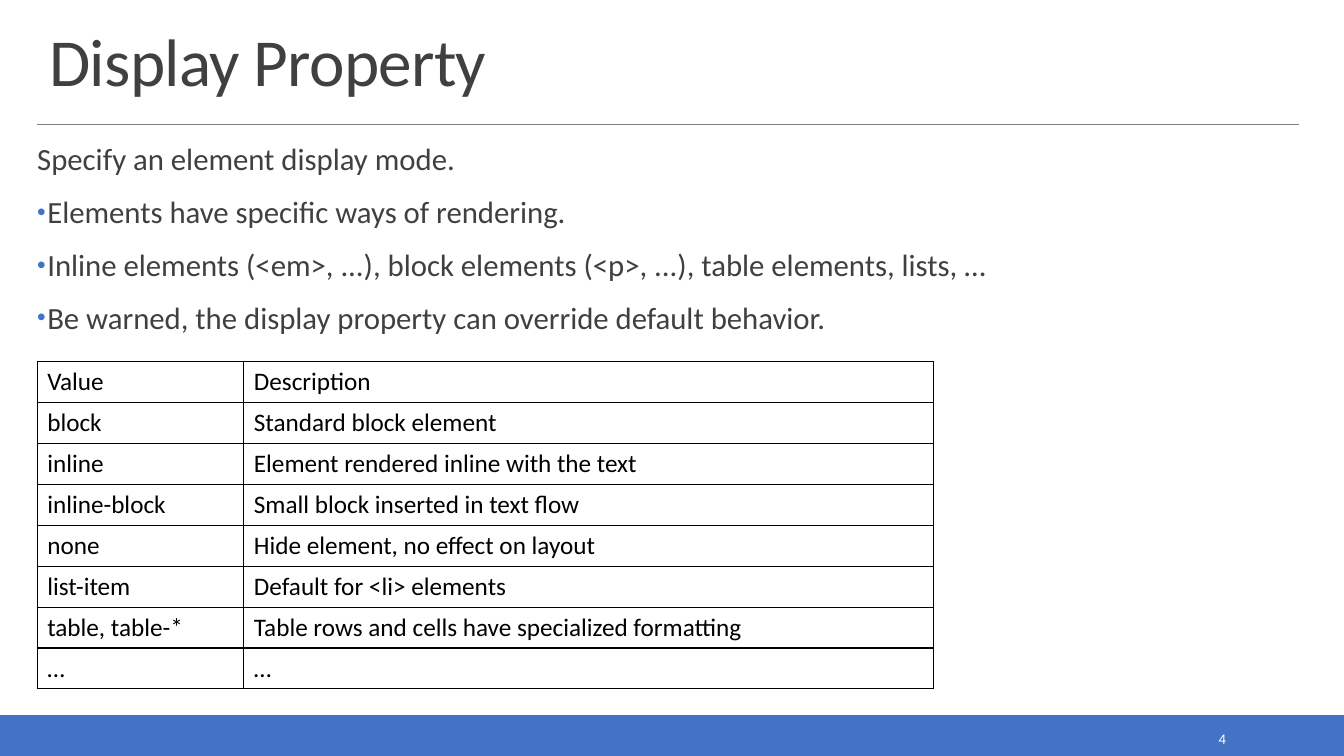
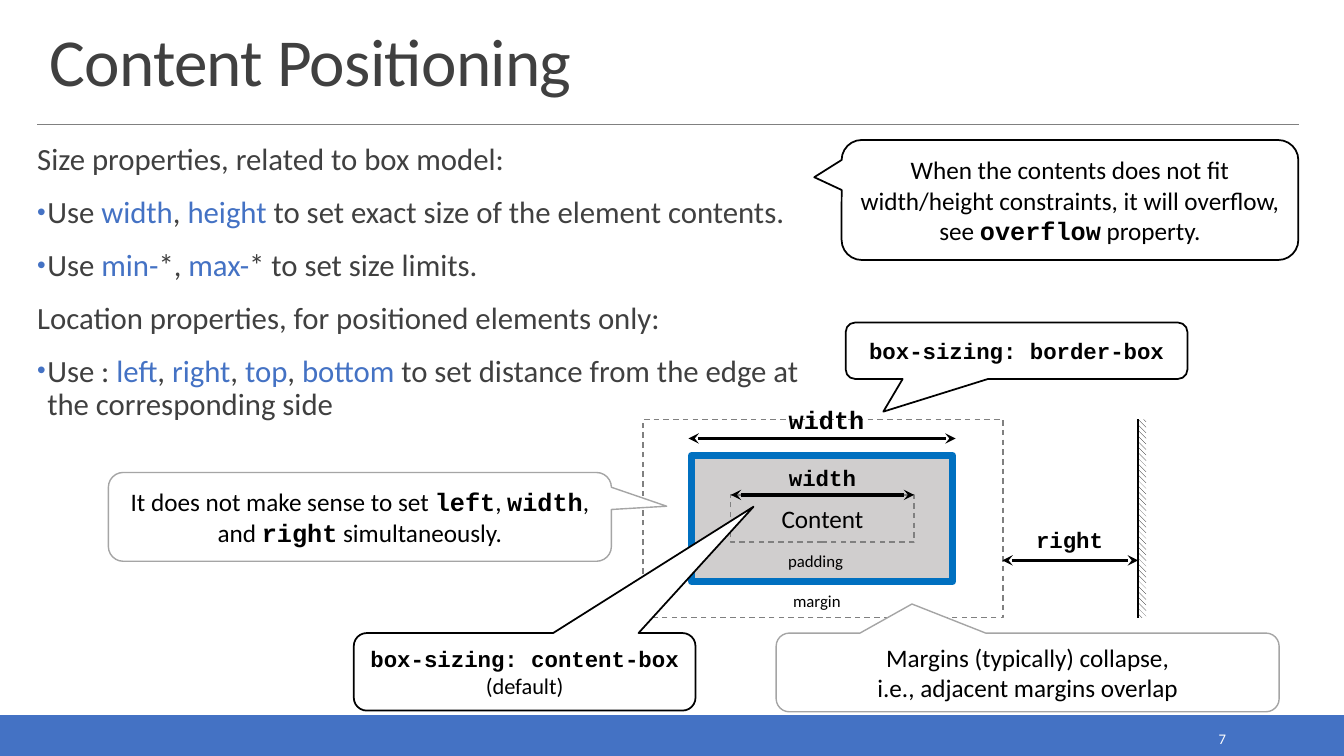
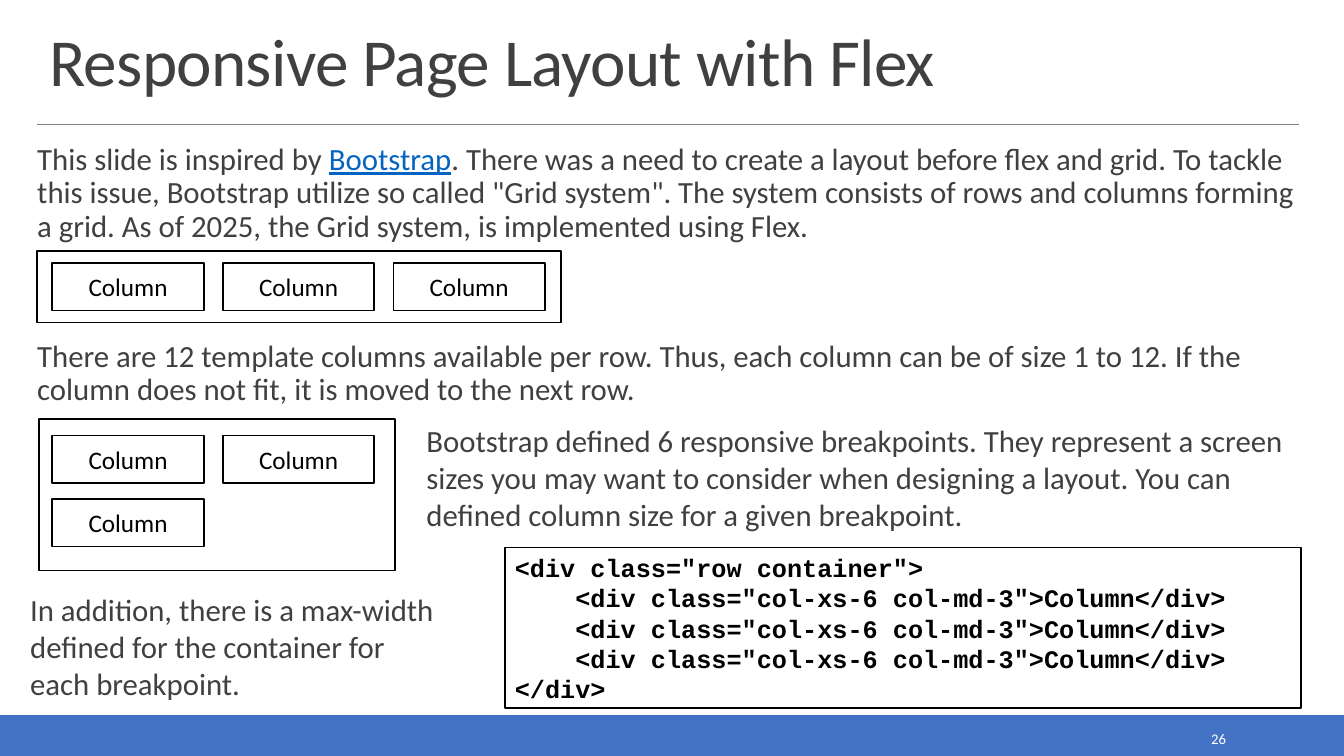
from pptx import Presentation
from pptx.dml.color import RGBColor
from pptx.enum.dml import MSO_LINE, MSO_PATTERN
from pptx.enum.shapes import MSO_CONNECTOR, MSO_SHAPE
from pptx.enum.text import MSO_ANCHOR, MSO_AUTO_SIZE, PP_ALIGN
from pptx.oxml.ns import qn
from pptx.util import Pt
from lxml.etree import SubElement

COLORS = {
    "accent": "4472C4",
    "text": "404040",
    "black": "000000",
    "white": "FFFFFF",
    "rule": "808080",
    "muted": "A5A5A5",
    "padding": "D0CECE",
    "border": "0070C0",
    "link": "0563C1",
}
SANS, MONO = "Calibri", "Courier New"
LEFT, CONTENT_WIDTH, BODY_TOP = 26.6, 901.4, 100
INDENTS = {"•": (7.2, -7.2), "\t": (43.2, 0)}
CODE = {"font": MONO, "bold": True}
PROSE = {"size": 22, "color": "text", "insets": (0, 2.9)}
BODY = {**PROSE, "spacing": 0.9, "before": 12, "after": 2}
COLUMN_SIZE, COLUMN_PITCH = (108.2, 34), 121.8


def rgb(name):
    return RGBColor.from_string(COLORS[name])


def points(*lengths):
    return [Pt(length) for length in lengths]


def mark_paragraph(paragraph, marker):
    margin, first = INDENTS.get(marker, (0, 0))
    properties = paragraph._p.get_or_add_pPr()
    properties.set("marL", str(Pt(margin)))
    properties.set("indent", str(Pt(first)))
    if marker == "•":
        color = SubElement(properties, qn("a:buClr"))
        SubElement(color, qn("a:srgbClr"), val=COLORS["accent"])
        SubElement(properties, qn("a:buSzPct"), val="80000")
        SubElement(properties, qn("a:buChar"), char=marker)
    else:
        SubElement(properties, qn("a:buNone"))


def format_run(run, size, color, font=SANS, bold=False, underline=False, tracking=0):
    run.font.size = Pt(size)
    run.font.name = font
    run.font.bold = bold
    run.font.underline = underline
    run.font.color.rgb = rgb(color)
    if tracking:
        run._r.get_or_add_rPr().set("spc", str(int(tracking * 100)))


def write(frame, text, size=18, color="black", emphasis=None, align=PP_ALIGN.LEFT,
          anchor=MSO_ANCHOR.TOP, insets=(7.2, 3.6), spacing=None, before=None,
          after=None, **run_format):
    frame.word_wrap = True
    frame.auto_size = MSO_AUTO_SIZE.NONE
    frame.vertical_anchor = anchor
    frame.margin_left = frame.margin_right = Pt(insets[0])
    frame.margin_top = frame.margin_bottom = Pt(insets[1])
    plain = {"size": size, "color": color, **run_format}
    for index, line in enumerate(text.split("\n")):
        paragraph = frame.add_paragraph() if index else frame.paragraphs[0]
        paragraph.alignment = align
        paragraph.line_spacing = spacing
        paragraph.space_before = None if before is None else Pt(before)
        paragraph.space_after = None if after is None else Pt(after)
        marker = line[:1] if line[:1] in INDENTS else ""
        mark_paragraph(paragraph, marker)
        for part, words in enumerate(line[len(marker):].split("|")):
            if words:
                run = paragraph.add_run()
                run.text = words
                format_run(run, **{**plain, **(emphasis or {} if part % 2 else {})})


def add_label(slide, box, text, **text_format):
    label = slide.shapes.add_textbox(*points(*box))
    write(label.text_frame, text, **text_format)


def add_box(slide, box, text="", fill=None, line="black", weight=1.25, dash=None,
            kind=MSO_SHAPE.RECTANGLE, align=PP_ALIGN.CENTER,
            anchor=MSO_ANCHOR.MIDDLE, **text_format):
    shape = slide.shapes.add_shape(kind, *points(*box))
    shape.shadow.inherit = False
    if fill:
        shape.fill.solid()
        shape.fill.fore_color.rgb = rgb(fill)
    else:
        shape.fill.background()
    if line:
        shape.line.color.rgb = rgb(line)
        shape.line.width = Pt(weight)
        shape.line.dash_style = dash
    else:
        shape.line.fill.background()
    if text:
        write(shape.text_frame, text, align=align, anchor=anchor, **text_format)
    return shape


def add_callout(slide, box, tip, text, **box_format):
    callout = add_box(slide, box, text, fill="white", emphasis=CODE,
                      kind=MSO_SHAPE.ROUNDED_RECTANGULAR_CALLOUT, **box_format)
    for index, value in enumerate((*tip, 0.167)):
        callout.adjustments[index] = value


def add_line(slide, ends, color="black", weight=1.0, arrows=False):
    line = slide.shapes.add_connector(MSO_CONNECTOR.STRAIGHT, *points(*ends))
    line.line.color.rgb = rgb(color)
    line.line.width = Pt(weight)
    if arrows:
        outline = line.line._get_or_add_ln()
        for end in ("a:headEnd", "a:tailEnd"):
            SubElement(outline, qn(end), type="stealth")
    SubElement(line._element.spPr, qn("a:effectLst"))
    return line


def add_dimension(slide, start, end, y):
    add_line(slide, (start, y, end, y), weight=2.5, arrows=True)


def border_cell(cell):
    properties = cell._tc.get_or_add_tcPr()
    for index, side in enumerate(("a:lnL", "a:lnR", "a:lnT", "a:lnB")):
        edge = SubElement(properties, qn(side), w=str(Pt(1)))
        fill = SubElement(edge, qn("a:solidFill"))
        SubElement(fill, qn("a:srgbClr"), val=COLORS["black"])
        properties.insert(index, edge)


def add_grid(slide, left, top, widths, row_height, rows):
    frame = slide.shapes.add_table(len(rows), len(widths), *points(
        left, top, sum(widths), row_height * len(rows)))
    table = frame.table
    table.first_row = table.horz_banding = False
    for column, width in zip(table.columns, widths):
        column.width = Pt(width)
    for row, texts in zip(table.rows, rows):
        row.height = Pt(row_height)
        for cell, text in zip(row.cells, texts):
            write(cell.text_frame, text)
            cell.fill.background()
            border_cell(cell)


def place(shape, box):
    shape.left, shape.top, shape.width, shape.height = points(*box)


def dress_layout(layout, slide):
    place(layout.placeholders[0], (28, 14.4, CONTENT_WIDTH, 60.5))
    band = add_box(slide, (0, 511.2, 960, 28.8), fill="accent", line="accent")
    rule = add_line(slide, (LEFT, 88.6, LEFT + CONTENT_WIDTH, 88.6), "rule", 0.5)
    for offset, shape in enumerate((band, rule)):
        shape.element.xpath(".//p:cNvPr")[0].set("id", str(100 + offset))
        layout.shapes.element.insert(2 + offset, shape.element)


def start_slide(deck, title, number, body, body_size, emphasis=None):
    slide = deck.slides.add_slide(deck.slide_layouts[1])
    write(slide.shapes.title.text_frame, title, size=48, color="text",
          anchor=MSO_ANCHOR.BOTTOM, spacing=0.85, before=0, tracking=-0.5)
    place(slide.placeholders[1], (LEFT, BODY_TOP, *body_size))
    write(slide.placeholders[1].text_frame, body, emphasis=emphasis, **BODY)
    add_label(slide, (779.8, 517.7, 103, 20.2), number, size=10.5, color="white",
              align=PP_ALIGN.RIGHT, anchor=MSO_ANCHOR.MIDDLE)
    return slide


def build_display_slide(deck):
    slide = start_slide(
        deck, "Display Property", "4",
        "Specify an element display mode.\n"
        "•Elements have specific ways of rendering.\n"
        "•Inline elements (<em>, ...), block elements (<p>, ...), table elements, lists, …\n"
        "•Be warned, the display property can override default behavior.",
        (CONTENT_WIDTH, 153.4))
    add_grid(slide, LEFT, 258.5, (147.6, 492.5), 29.16, [
        ("Value", "Description"),
        ("block", "Standard block element"),
        ("inline", "Element rendered inline with the text"),
        ("inline-block", "Small block inserted in text flow"),
        ("none", "Hide element, no effect on layout"),
        ("list-item", "Default for <li> elements"),
        ("table, table-*", "Table rows and cells have specialized formatting"),
        ("…", "…"),
    ])
    return slide


def draw_box_model(slide):
    top, height, edge = 299.5, 141.8, 812.9
    dashed = {"line": "rule", "weight": 1, "dash": MSO_LINE.DASH}
    label = {"align": PP_ALIGN.CENTER, **CODE}
    add_box(slide, (459.4, top, 257, height), **dashed)
    add_box(slide, (493.9, 325.4, 186.5, 90), fill="padding", line="border", weight=5)
    add_box(slide, (522, 353.5, 131, 33.8), "Content", **dashed)
    add_label(slide, (555.5, 328.3, 64, 26.6), "width", size=16, **label)
    add_dimension(slide, 522, 653, 353.5)
    add_dimension(slide, 716, edge, 400.3)
    add_label(slide, (732, 372.2, 64, 26.6), "right", size=16, **label)
    wall = add_box(slide, (edge, top, 5.8, height), line=None)
    wall.fill.patterned()
    wall.fill.pattern = MSO_PATTERN.WIDE_DOWNWARD_DIAGONAL
    wall.fill.fore_color.rgb = rgb("black")
    wall.fill.back_color.rgb = rgb("white")
    add_line(slide, (edge, top, edge, top + height))
    add_label(slide, (555.8, 390.2, 65.5, 21.6), "padding", size=12)
    add_label(slide, (559.4, 418.3, 56.2, 21.6), "margin", size=12)
    add_dimension(slide, 491.8, 682.6, 313.2)
    add_label(slide, (555.4, 285.1, 70, 28.8), "width", **label)


def build_positioning_slide(deck):
    slide = start_slide(
        deck, "Content Positioning", "7",
        "Size properties, related to box model:\n"
        "•Use |width|, |height| to set exact size of the element contents.\n"
        "•Use |min-|*, |max-|* to set size limits.\n"
        "Location properties, for positioned elements only:\n"
        "•Use : |left|, |right|, |top|, |bottom| to set distance from the edge"
        " at the corresponding side",
        (544.3, 232.6), {"color": "accent"})
    draw_box_model(slide)
    aside = {"line": "muted", "weight": 1}
    add_callout(slide, (77.4, 337.5, 359.3, 63.4), (0.61, -0.12),
                "It does not make sense to set |left|, |width|,"
                " and |right| simultaneously.", **aside)
    add_callout(slide, (604.1, 230.4, 244.1, 40.3), (-0.39, 1.08),
                "|box-sizing: border-box|", size=16)
    add_callout(slide, (252.7, 452.2, 244.1, 55.4), (0.67, -2.13),
                "|box-sizing: content-box|\n(default)", size=16)
    add_callout(slide, (601.2, BODY_TOP, 326.2, 85.7), (-0.56, -0.19),
                "When the contents does not fit width/height constraints,"
                " it will overflow,\nsee |overflow| property.")
    add_callout(slide, (554.4, 452.2, 359.3, 56.2), (-0.23, -0.87),
                "Margins (typically) collapse,\n"
                "i.e., adjacent margins overlap", **aside)


def add_columns(slide, container, first_top, counts, row_pitch=45.4):
    add_box(slide, container, fill="white")
    for row, count in enumerate(counts):
        for column in range(count):
            add_box(slide, (37.4 + column * COLUMN_PITCH, first_top + row * row_pitch,
                            *COLUMN_SIZE), "Column", fill="white")


def build_flex_slide(deck):
    slide = start_slide(
        deck, "Responsive Page Layout with Flex", "26",
        "This slide is inspired by |Bootstrap|. There was a need to create a layout"
        " before flex and grid. To tackle this issue, Bootstrap utilize so called"
        ' "Grid system". The system consists of rows and columns forming a grid.'
        " As of 2025, the Grid system, is implemented using Flex.",
        (CONTENT_WIDTH, 79.2), {"color": "link", "underline": True})
    add_columns(slide, (LEFT, 179.3, 374.4, 51.1), 187.9, [3])
    add_columns(slide, (28.1, 299.5, 254.2, 108), 311, [2, 1])
    add_label(slide, (LEFT, 240.5, CONTENT_WIDTH, 57.6),
              "There are 12 template columns available per row. Thus, each column can"
              " be of size 1 to 12. If the column does not fit, it is moved to the"
              " next row.", **BODY)
    add_label(slide, (304.6, 298.1, 625.7, 87.8),
              "Bootstrap defined 6 responsive breakpoints. They represent a screen"
              " sizes you may want to consider when designing a layout. You can"
              " defined column size for a given breakpoint.", **PROSE)
    column_tag = '\t<div class="col-xs-6 col-md-3">Column</div>'
    markup = ['<div class="row container">', *[column_tag] * 3, "</div>"]
    add_box(slide, (360.7, 391, 568.8, 114.5), "\n".join(markup),
            align=PP_ALIGN.LEFT, anchor=MSO_ANCHOR.TOP, **CODE)
    add_label(slide, (21.6, 419, 299.5, 87.8),
              "In addition, there is a max-width defined for the container for"
              " each breakpoint.", **PROSE)


def main():
    deck = Presentation()
    deck.slide_width, deck.slide_height = points(960, 540)
    display_slide = build_display_slide(deck)
    dress_layout(deck.slide_layouts[1], display_slide)
    build_positioning_slide(deck)
    build_flex_slide(deck)
    deck.save("out.pptx")


if __name__ == "__main__":
    main()
